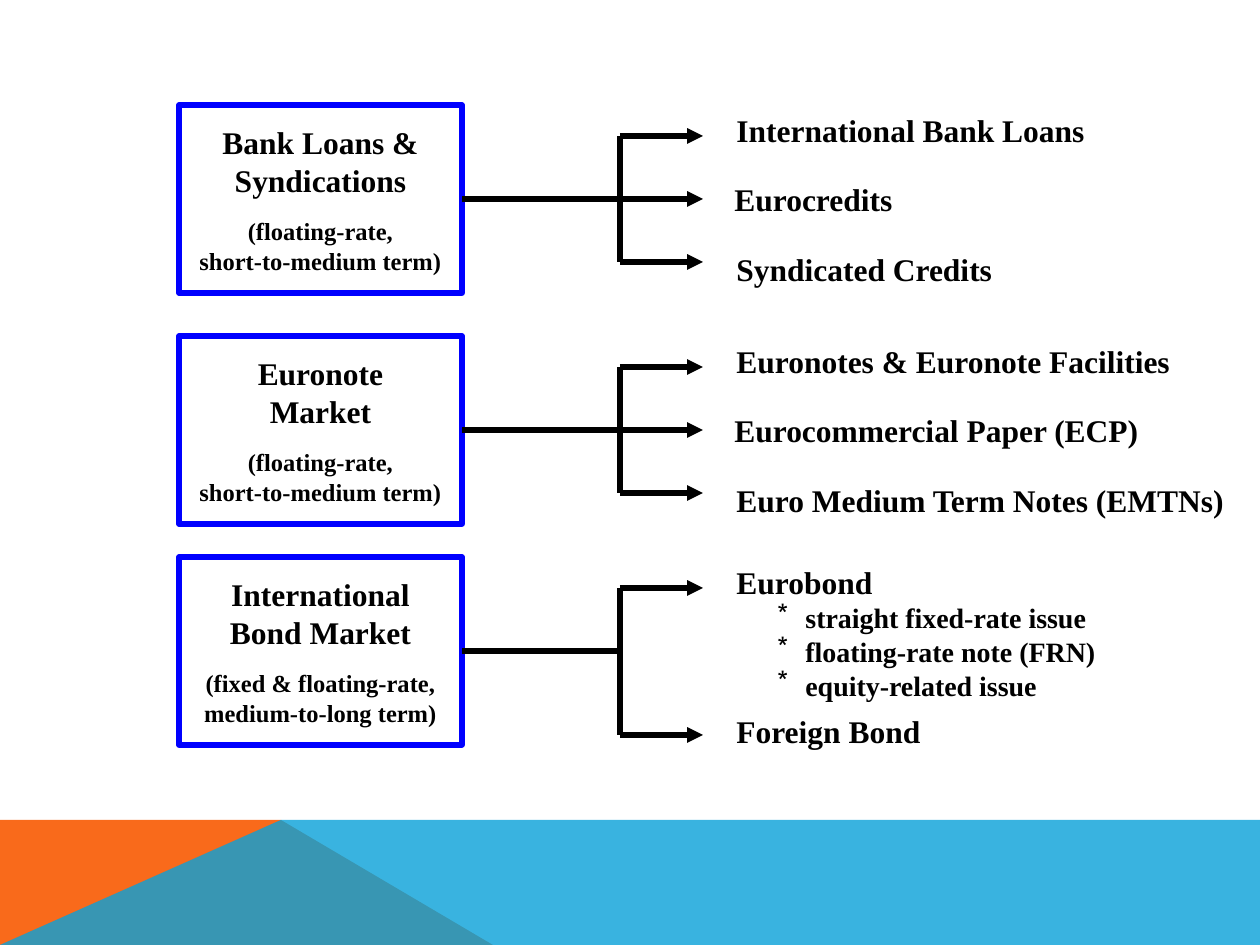
from lxml import etree
from pptx import Presentation
from pptx.dml.color import RGBColor
from pptx.enum import shapes, text
from pptx.oxml.ns import qn
from pptx.util import Pt

PX = 914400 // 126
THEME = {
    "font": "Times New Roman", "heading": Pt(18), "item": Pt(16), "note": Pt(14),
    "line": Pt(3), "black": RGBColor(0, 0, 0), "white": RGBColor(255, 255, 255),
    "blue": RGBColor(0, 0, 255), "orange": RGBColor(0xF9, 0x6A, 0x1B),
    "sky": RGBColor(0x08, 0xA1, 0xD9),
}

presentation = Presentation()
presentation.slide_width, presentation.slide_height = 1260 * PX, 945 * PX
slide = presentation.slides.add_slide(presentation.slide_layouts[6])


def write(shape, lines, sizes):
    frame = shape.text_frame
    frame.word_wrap = False
    frame.text = "\n".join(lines)
    for paragraph, size in zip(frame.paragraphs, sizes):
        for run in paragraph.runs:
            run.font.name, run.font.size, run.font.bold = THEME["font"], size, True
            run.font.color.rgb = THEME["black"]
    return frame


def connect(x1, y1, x2, y2, arrow=False):
    line = slide.shapes.add_connector(
        shapes.MSO_CONNECTOR.STRAIGHT, x1 * PX, y1 * PX, x2 * PX, y2 * PX)
    line.line.color.rgb, line.line.width = THEME["black"], THEME["line"]
    if arrow:
        etree.SubElement(line.line._get_or_add_ln(), qn("a:tailEnd"), type="triangle")
    etree.SubElement(line._element.spPr, qn("a:effectLst"))
    return line


# Footer bands
bands = [
    ("orange", 100, [(0, 945), (0, 820), (281, 820), (493, 945)]),
    ("sky", 80, [(0, 945), (281, 820), (1260, 820), (1260, 945)]),
]
for colour, opacity, points in bands:
    builder = slide.shapes.build_freeform(*points[0], scale=PX)
    builder.add_line_segments(points[1:], close=True)
    band = builder.convert_to_shape()
    band.shadow.inherit = False
    band.fill.solid()
    band.fill.fore_color.rgb = THEME[colour]
    band.line.fill.background()
    if opacity < 100:
        colour_node = band._element.spPr.find(qn("a:solidFill"))[0]
        etree.SubElement(colour_node, qn("a:alpha"), val=str(opacity * 1000))

# Markets: top, box lines, then instruments as (left, top offset, width, arrow offset, lines)
BOX_LEFT, BOX_WIDTH, BOX_HEIGHT = 179, 283, 188
TRUNK, ARROW_END = 620, 703
markets = [
    (105, ["Bank Loans &", "Syndications", "(floating-rate,", "short-to-medium term)"], [
        (724, 0, 374, -63, ["International Bank Loans"]),
        (722, 69, 185, 0, ["Eurocredits"]),
        (724, 139, 282, 63, ["Syndicated Credits"])]),
    (336, ["Euronote", "Market", "(floating-rate,", "short-to-medium term)"], [
        (724, 0, 460, -63, ["Euronotes & Euronote Facilities"]),
        (722, 69, 431, 0, ["Eurocommercial Paper (ECP)"]),
        (724, 139, 517, 63, ["Euro Medium Term Notes (EMTNs)"])]),
    (557, ["International", "Bond Market", "(fixed & floating-rate,", "medium-to-long term)"], [
        (724, 0, 387, -63, ["Eurobond", "straight fixed-rate issue",
                            "floating-rate note (FRN)", "equity-related issue"]),
        (724, 149, 210, 84, ["Foreign Bond"])]),
]

for top, title, instruments in markets:
    # Market box
    box = slide.shapes.add_shape(
        shapes.MSO_SHAPE.RECTANGLE, BOX_LEFT * PX, top * PX, BOX_WIDTH * PX, BOX_HEIGHT * PX)
    box.shadow.inherit = False
    box.fill.solid()
    box.fill.fore_color.rgb = THEME["white"]
    box.line.color.rgb, box.line.width = THEME["blue"], THEME["line"]
    frame = write(box, title, [THEME["heading"]] * 2 + [THEME["note"]] * 2)
    frame.vertical_anchor = text.MSO_ANCHOR.MIDDLE
    for paragraph in frame.paragraphs:
        paragraph.alignment = text.PP_ALIGN.CENTER
    frame.paragraphs[2].space_before = Pt(10)

    # Stem and trunk
    middle = top + BOX_HEIGHT // 2
    stem = connect(BOX_LEFT + BOX_WIDTH, middle, TRUNK, middle)
    stem.begin_connect(box, 3)
    connect(TRUNK, middle + instruments[0][3], TRUNK, middle + instruments[-1][3])

    # Branches and instruments
    for left, offset, width, branch, lines in instruments:
        connect(TRUNK, middle + branch, ARROW_END, middle + branch, arrow=True)
        height = 50 + 35 * (len(lines) - 1)
        label = slide.shapes.add_textbox(left * PX, (top + offset) * PX, width * PX, height * PX)
        frame = write(label, lines, [THEME["heading"]] + [THEME["item"]] * (len(lines) - 1))
        for paragraph in frame.paragraphs[1:]:
            properties = paragraph._p.get_or_add_pPr()
            properties.set("marL", str(69 * PX))
            properties.set("indent", str(-28 * PX))
            etree.SubElement(properties, qn("a:buChar"), char="*")

presentation.save("out.pptx")
